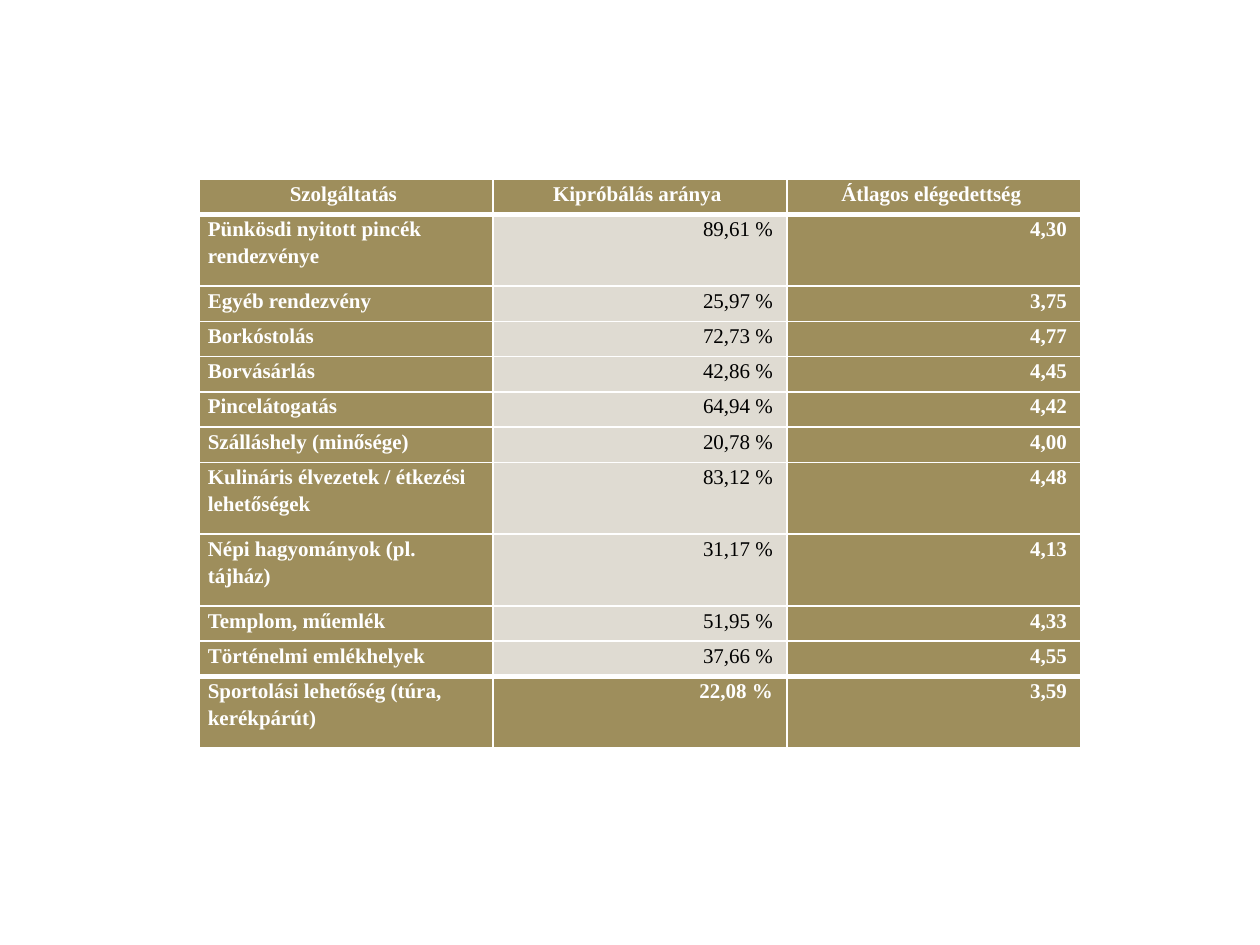
"""Builds a slide with a table of service trial rates and satisfaction scores."""
from dataclasses import dataclass

from lxml.etree import SubElement
from pptx import Presentation
from pptx.dml.color import RGBColor as RGB
from pptx.enum.text import PP_ALIGN as ALIGN
from pptx.oxml.ns import qn
from pptx.util import Inches, Pt


@dataclass(frozen=True)
class Theme:
    font: str = "Times New Roman"
    size: int = 12
    line_spacing: float = 1.15
    accent: str = "9E8E5C"
    pale: str = "DFDBD2"
    light: str = "FFFFFF"
    dark: str = "000000"
    thin: int = 1
    thick: int = 3


THEME = Theme()
LEFT, TOP, WIDTH = 1.58, 1.42, 7
ROW_HEIGHT, TALL_ROW_HEIGHT = 0.28, 0.57
TALL_ROWS = {1, 7, 8, 11}
HEADER = ("Szolgáltatás ", "Kipróbálás aránya ", "Átlagos elégedettség ")
SERVICES = [
    ("Pünkösdi nyitott pincék rendezvénye", "89,61", "4,30"),
    ("Egyéb rendezvény", "25,97", "3,75"),
    ("Borkóstolás", "72,73", "4,77"),
    ("Borvásárlás", "42,86", "4,45"),
    ("Pincelátogatás", "64,94", "4,42"),
    ("Szálláshely (minősége)", "20,78", "4,00"),
    ("Kulináris élvezetek / étkezési lehetőségek", "83,12", "4,48"),
    ("Népi hagyományok (pl. tájház)", "31,17", "4,13"),
    ("Templom, műemlék", "51,95", "4,33"),
    ("Történelmi emlékhelyek", "37,66", "4,55"),
    ("Sportolási lehetőség (túra, kerékpárút)", "22,08", "3,59"),
]


def set_borders(cell, top, bottom):
    """Draw light borders, with the given top and bottom widths in points."""
    tc_pr = cell._tc.get_or_add_tcPr()
    widths = {"L": THEME.thin, "R": THEME.thin, "T": top, "B": bottom}
    for side, width in widths.items():
        ln = SubElement(tc_pr, qn(f"a:ln{side}"), w=str(Pt(width)))
        fill = SubElement(ln, qn("a:solidFill"))
        SubElement(fill, qn("a:srgbClr"), val=THEME.light)


def fill_cell(cell, text, align, strong):
    """Write and format one cell; strong cells are bold on the accent colour."""
    cell.margin_left = cell.margin_right = Inches(0.07)
    cell.margin_top = cell.margin_bottom = 0
    cell.fill.solid()
    cell.fill.fore_color.rgb = RGB.from_string(THEME.accent if strong else THEME.pale)
    p = cell.text_frame.paragraphs[0]
    p.text = text
    p.alignment = align
    p.line_spacing = THEME.line_spacing
    p.font.name = THEME.font
    p.font.size = Pt(THEME.size)
    p.font.bold = strong
    p.font.color.rgb = RGB.from_string(THEME.light if strong else THEME.dark)


def add_service_table(slide):
    """Add the table with a header row, service rows and a strong last row."""
    rows = [HEADER] + [(name, f"{rate} % ", f"{score} ") for name, rate, score in SERVICES]
    heights = [TALL_ROW_HEIGHT if i in TALL_ROWS else ROW_HEIGHT for i in range(len(rows))]
    table = slide.shapes.add_table(
        len(rows), len(HEADER), Inches(LEFT), Inches(TOP), Inches(WIDTH), Inches(sum(heights))
    ).table
    last = len(rows) - 1
    for i, (row, height) in enumerate(zip(rows, heights)):
        table.rows[i].height = Inches(height)
        top = THEME.thick if i in (1, last) else THEME.thin
        bottom = THEME.thick if i in (0, last - 1) else THEME.thin
        for j, text in enumerate(row):
            cell = table.cell(i, j)
            align = ALIGN.CENTER if i == 0 else ALIGN.RIGHT if j else ALIGN.LEFT
            set_borders(cell, top, bottom)
            fill_cell(cell, text, align, strong=j != 1 or i in (0, last))


def main():
    """Build and save the presentation."""
    prs = Presentation()
    prs.slide_width, prs.slide_height = Inches(10), Inches(7.5)
    slide = prs.slides.add_slide(prs.slide_layouts[6])
    add_service_table(slide)
    prs.save("out.pptx")


if __name__ == "__main__":
    main()
